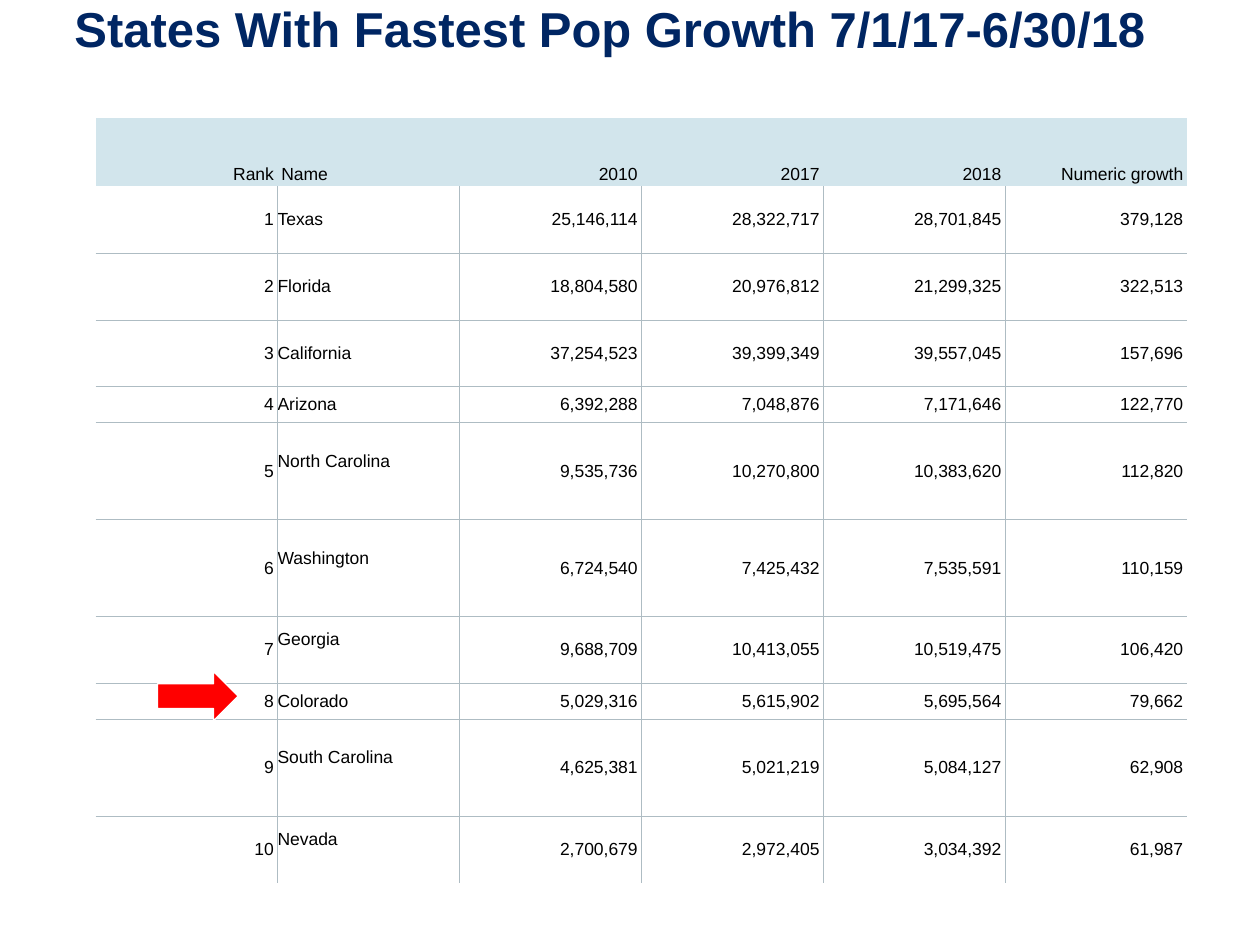
from lxml.etree import SubElement
from pptx import Presentation
from pptx.dml.color import RGBColor
from pptx.enum.shapes import MSO_SHAPE
from pptx.enum.text import MSO_ANCHOR, PP_ALIGN
from pptx.oxml.ns import qn
from pptx.util import Inches, Pt

COLORS = {
    "navy": "002663",
    "black": "000000",
    "white": "FFFFFF",
    "header": "D2E5EC",
    "grid": "AEBCC3",
    "red": "FF0000",
}
PLAIN_TABLE_STYLE = "{2D5ABB26-0587-4C30-8999-92F81FD0307C}"
TALL, SHORT, DOUBLE = 0.53, 0.285, 0.77
HEADER_HEIGHT = 0.54
LINE_HEIGHT = 0.16
HEADINGS = ("Rank", "Name", "2010", "2017", "2018", "Numeric growth")
STATES = [
    ("Texas", "25,146,114", "28,322,717", "28,701,845", "379,128"),
    ("Florida", "18,804,580", "20,976,812", "21,299,325", "322,513"),
    ("California", "37,254,523", "39,399,349", "39,557,045", "157,696"),
    ("Arizona", "6,392,288", "7,048,876", "7,171,646", "122,770"),
    ("North Carolina", "9,535,736", "10,270,800", "10,383,620", "112,820"),
    ("Washington", "6,724,540", "7,425,432", "7,535,591", "110,159"),
    ("Georgia", "9,688,709", "10,413,055", "10,519,475", "106,420"),
    ("Colorado", "5,029,316", "5,615,902", "5,695,564", "79,662"),
    ("South Carolina", "4,625,381", "5,021,219", "5,084,127", "62,908"),
    ("Nevada", "2,700,679", "2,972,405", "3,034,392", "61,987"),
]
ROW_HEIGHTS = [HEADER_HEIGHT, TALL, TALL, TALL, SHORT, DOUBLE, DOUBLE,
               TALL, SHORT, DOUBLE, TALL]
RAISED_NAMES = {"North Carolina", "Washington", "Georgia", "South Carolina", "Nevada"}


def color(name):
    return RGBColor.from_string(COLORS[name])


def write_text(frame, text, size=10, ink="black", bold=False, align=PP_ALIGN.LEFT):
    para = frame.paragraphs[0]
    para.alignment = align
    span = para.add_run()
    span.text = text
    span.font.name = "Arial"
    span.font.size = Pt(size)
    span.font.bold = bold
    span.font.color.rgb = color(ink)


def add_title(page, left, top, width, height):
    box = page.shapes.add_textbox(Inches(left), Inches(top), Inches(width), Inches(height))
    frame = box.text_frame
    frame.word_wrap = True
    frame.vertical_anchor = MSO_ANCHOR.TOP
    frame.margin_left = frame.margin_right = frame.margin_top = frame.margin_bottom = 0
    write_text(frame, "States With Fastest Pop Growth 7/1/17-6/30/18",
               size=28, ink="navy", bold=True, align=PP_ALIGN.CENTER)


def add_borders(cell, sides):
    properties = cell._tc.get_or_add_tcPr()
    for side in sides:
        line = SubElement(properties, qn(f"a:ln{side}"), w=str(Pt(0.5)))
        fill = SubElement(line, qn("a:solidFill"))
        SubElement(fill, qn("a:srgbClr"), val=COLORS["grid"])


def format_cell(cell, text, row, column):
    is_header = row == 0
    is_name = column == 1
    if not is_header:
        present = {
            "L": column > 0,
            "R": column < len(HEADINGS) - 1,
            "T": row > 1,
            "B": row < len(STATES),
        }
        add_borders(cell, [side for side, shown in present.items() if shown])
    cell.fill.solid()
    cell.fill.fore_color.rgb = color("header" if is_header else "white")
    cell.vertical_anchor = MSO_ANCHOR.BOTTOM if is_header else MSO_ANCHOR.MIDDLE
    cell.margin_left = Inches(0 if is_name and not is_header else 0.03)
    cell.margin_right = Inches(0.03)
    cell.margin_top = Inches(0.02)
    cell.margin_bottom = Inches(0.02 + (LINE_HEIGHT if text in RAISED_NAMES else 0))
    write_text(cell.text_frame, text, align=PP_ALIGN.LEFT if is_name else PP_ALIGN.RIGHT)


def add_growth_table(page, left, top, width, height):
    records = [HEADINGS] + [(str(rank), *state) for rank, state in enumerate(STATES, 1)]
    frame = page.shapes.add_table(len(records), len(HEADINGS), Inches(left), Inches(top),
                                  Inches(width), Inches(height))
    table = frame.table
    table.first_row = table.horz_banding = False
    table._tbl.tblPr.find(qn("a:tableStyleId")).text = PLAIN_TABLE_STYLE
    for column in table.columns:
        column.width = Inches(width / len(HEADINGS))
    for row, record in enumerate(records):
        table.rows[row].height = Inches(height * ROW_HEIGHTS[row] / sum(ROW_HEIGHTS))
        for column, text in enumerate(record):
            format_cell(table.cell(row, column), text, row, column)


def add_colorado_arrow(page, left, top, width, height):
    arrow = page.shapes.add_shape(MSO_SHAPE.RIGHT_ARROW, Inches(left), Inches(top),
                                  Inches(width), Inches(height))
    arrow.shadow.inherit = False
    arrow.fill.solid()
    arrow.fill.fore_color.rgb = color("red")
    arrow.line.color.rgb = color("white")
    arrow.line.width = Pt(0.75)


def main():
    deck = Presentation()
    deck.slide_width, deck.slide_height = Inches(10), Inches(7.5)
    page = deck.slides.add_slide(deck.slide_layouts[6])
    add_title(page, 0, -0.01, 9.68, 0.96)
    add_growth_table(page, 0.76, 0.94, 8.66, 6.07)
    add_colorado_arrow(page, 1.25, 5.33, 0.64, 0.39)
    deck.save("out.pptx")


if __name__ == "__main__":
    main()
